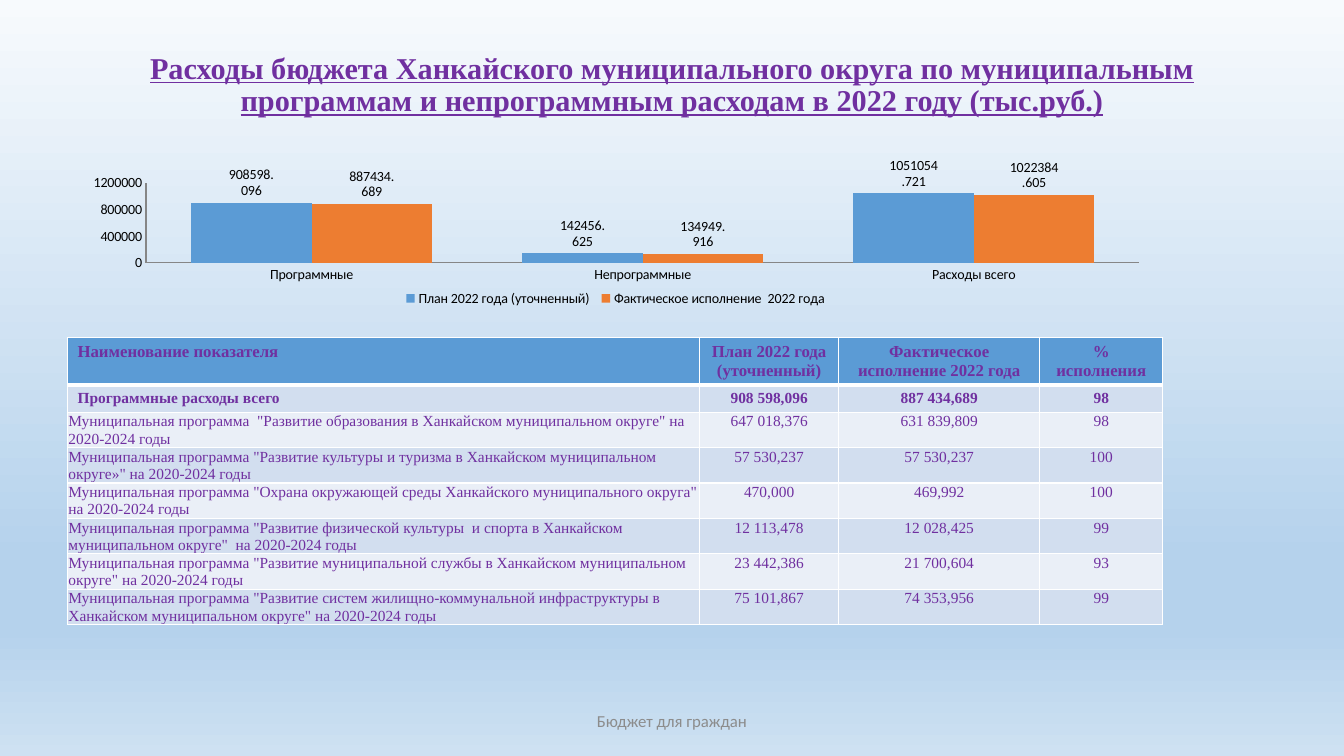
import pptx
import pptx.chart.data
import pptx.dml.color
import pptx.enum.chart
import pptx.enum.text
import pptx.oxml
import pptx.oxml.ns
import pptx.util
from dataclasses import dataclass

Pt = pptx.util.Pt
Align = pptx.enum.text.PP_ALIGN
Anchor = pptx.enum.text.MSO_ANCHOR
Kinds = pptx.enum.chart

TITLE = "Расходы бюджета Ханкайского муниципального округа по муниципальным программам и непрограммным расходам в 2022 году (тыс.руб.)"
FOOTER = "Бюджет для граждан"
GROUPS = ["Программные", "Непрограммные", "Расходы всего"]
SERIES = [
    ("План 2022 года (уточненный) ", [908598.096, 142456.625, 1051054.721]),
    ("Фактическое исполнение  2022 года", [887434.689, 134949.916, 1022384.605]),
]
ROWS = [
    ("Наименование показателя", "План 2022 года (уточненный)", "Фактическое исполнение 2022 года", "% исполнения"),
    ("Программные расходы всего", "908 598,096", "887 434,689", "98"),
    ('Муниципальная программа  "Развитие образования в Ханкайском муниципальном округе" на 2020-2024 годы',
     "647 018,376", "631 839,809", "98"),
    ('Муниципальная программа "Развитие культуры и туризма в Ханкайском муниципальном округе»" на 2020-2024 годы',
     "57 530,237", "57 530,237", "100"),
    ('Муниципальная программа "Охрана окружающей среды Ханкайского муниципального округа" на 2020-2024 годы',
     "470,000", "469,992", "100"),
    ('Муниципальная программа "Развитие физической культуры  и спорта в Ханкайском муниципальном округе"  на 2020-2024 годы',
     "12 113,478", "12 028,425", "99"),
    ('Муниципальная программа "Развитие муниципальной службы в Ханкайском муниципальном округе" на 2020-2024 годы',
     "23 442,386", "21 700,604", "93"),
    ('Муниципальная программа "Развитие систем жилищно-коммунальной инфраструктуры в Ханкайском муниципальном округе" на 2020-2024 годы',
     "75 101,867", "74 353,956", "99"),
]
WIDTHS = [451.5, 99.5, 143.5, 88]
HEIGHTS = [34, 19] + [25.3] * 6


@dataclass(frozen=True)
class Theme:
    serif: str = "Times New Roman"
    sans: str = "Calibri"
    text: str = "7030A0"
    head: str = "5B9BD5"
    bands: tuple = ("EAEFF7", "D2DEEF")
    bars: tuple = ("5B9BD5", "ED7D31")
    rule: str = "FFFFFF"
    axis: str = "868686"
    foot: str = "8C8C8C"
    ink: str = "000000"
    sky: tuple = ((0, "F7FAFD"), (74, "B5D2EC"), (83, "B5D2EC"), (100, "CEE1F2"))
    big: float = 21.6
    mid: float = 12
    body: float = 11
    small: float = 10


T = Theme()


def color(code):
    return pptx.dml.color.RGBColor.from_string(code)


def style(font, face, size, code, bold=False):
    font.name, font.size, font.bold = face, Pt(size), bold
    font.color.rgb = color(code)


def node(text):
    head, tail = text.split(" ", 1) if " " in text.split(">")[0] else (text.split(">")[0], ">" + text.split(">", 1)[1])
    prefix = head[1:].split(":")[0]
    return pptx.oxml.parse_xml(f"{head} {pptx.oxml.ns.nsdecls(*{prefix, 'a'})} {tail}")


def paint(slide):
    fill = slide.background.fill
    fill.gradient()
    fill.gradient_angle = 270
    stops = "".join(f'<a:gs pos="{pos * 1000}"><a:srgbClr val="{code}"/></a:gs>' for pos, code in T.sky)
    old = slide.background._cSld.find(".//" + pptx.oxml.ns.qn("a:gsLst"))
    old.getparent().replace(old, node(f"<a:gsLst>{stops}</a:gsLst>"))


def write(shape, text, face, size, code, bold=False):
    frame = shape.text_frame
    frame.word_wrap = True
    frame.vertical_anchor = Anchor.MIDDLE
    frame.text = text
    para = frame.paragraphs[0]
    para.alignment = Align.CENTER
    style(para.font, face, size, code, bold)
    return para


def border(cell, base):
    props = cell._tc.get_or_add_tcPr()
    for at, side in enumerate("LRTB"):
        wide = Pt(base if side == "B" else 1)
        props.insert(at, node(
            f'<a:ln{side} w="{wide}"><a:solidFill><a:srgbClr val="{T.rule}"/></a:solidFill></a:ln{side}>'))


def add_grid(slide):
    grid = slide.shapes.add_table(len(ROWS), len(WIDTHS), Pt(48.2), Pt(241),
                                  Pt(sum(WIDTHS)), Pt(sum(HEIGHTS))).table
    for col, wide in zip(grid.columns, WIDTHS):
        col.width = Pt(wide)
    for r, row in enumerate(ROWS):
        grid.rows[r].height = Pt(HEIGHTS[r])
        for c, text in enumerate(row):
            cell = grid.cell(r, c)
            cell.text = text
            para = cell.text_frame.paragraphs[0]
            para.alignment = Align.CENTER if c else Align.LEFT
            style(para.font, T.serif, T.body if r else T.mid, T.text, r < 2)
            if r > 1:
                cell.margin_left = cell.margin_right = cell.margin_top = Pt(0.7)
                cell.margin_bottom = 0
            cell.fill.solid()
            cell.fill.fore_color.rgb = color(T.bands[r % 2] if r else T.head)
            border(cell, 1 if r else 3)


def add_bars(slide):
    data = pptx.chart.data.CategoryChartData()
    data.categories = GROUPS
    for name, vals in SERIES:
        data.add_series(name, vals)
    chart = slide.shapes.add_chart(Kinds.XL_CHART_TYPE.COLUMN_CLUSTERED, Pt(49.7), Pt(112.3),
                                   Pt(779.8), Pt(109.4), data).chart
    style(chart.font, T.sans, T.small, T.ink)
    chart.has_title = False
    chart.has_legend = True
    chart.legend.position = Kinds.XL_LEGEND_POSITION.BOTTOM
    chart.legend.include_in_layout = False
    for axis in (chart.category_axis, chart.value_axis):
        axis.major_tick_mark = axis.minor_tick_mark = Kinds.XL_TICK_MARK.NONE
        axis.has_major_gridlines = False
        axis.format.line.color.rgb = color(T.axis)
        axis.format.line.width = Pt(0.75)
    scale = chart.value_axis
    scale.minimum_scale, scale.maximum_scale, scale.major_unit = 0, 1200000, 400000
    plot = chart.plots[0]
    plot.vary_by_categories = False
    plot.gap_width, plot.overlap = 75, 0
    for bar, code in zip(plot.series, T.bars):
        bar.format.fill.solid()
        bar.format.fill.fore_color.rgb = color(code)
        tags = bar.data_labels
        tags.show_value = True
        tags.position = Kinds.XL_LABEL_POSITION.OUTSIDE_END
    box = "".join(f'<c:{key} val="{val}"/>' for key, val in (
        ("layoutTarget", "inner"), ("xMode", "edge"), ("yMode", "edge"),
        ("x", 0.07), ("y", 0.17), ("w", 0.91), ("h", 0.52)))
    area = chart._chartSpace.chart.plotArea
    for old in area.findall(pptx.oxml.ns.qn("c:layout")):
        area.remove(old)
    area.insert(0, node(f"<c:layout><c:manualLayout>{box}</c:manualLayout></c:layout>"))


def main():
    deck = pptx.Presentation()
    deck.slide_width, deck.slide_height = Pt(960), Pt(540)
    slide = deck.slides.add_slide(deck.slide_layouts[5])
    paint(slide)
    title = slide.shapes.title
    title.left, title.top, title.width, title.height = Pt(66), Pt(28.8), Pt(828), Pt(64.8)
    para = write(title, TITLE, T.serif, T.big, T.text, True)
    para.font.underline = True
    para.line_spacing = 0.9
    add_grid(slide)
    foot = slide.shapes.add_textbox(Pt(318), Pt(500.5), Pt(324), Pt(28.8))
    write(foot, FOOTER, T.sans, T.mid, T.foot)
    add_bars(slide)
    deck.save("out.pptx")


if __name__ == "__main__":
    main()
